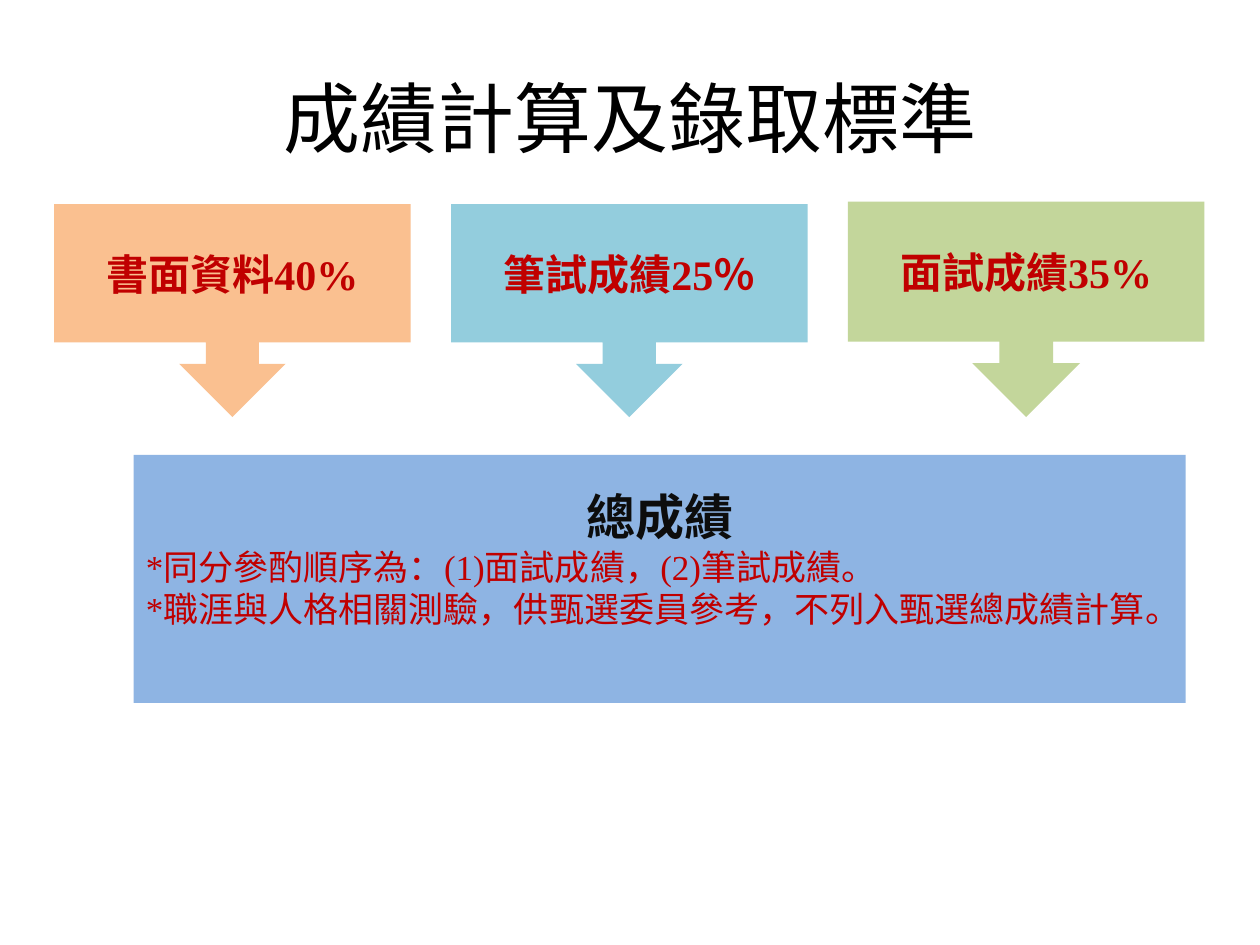
"""Build the slide on score calculation and admission criteria."""
from dataclasses import dataclass

from lxml.etree import SubElement
from pptx import Presentation
from pptx.dml.color import RGBColor
from pptx.enum.shapes import MSO_SHAPE
from pptx.enum.text import MSO_ANCHOR, PP_ALIGN
from pptx.oxml.ns import qn
from pptx.util import Inches, Pt

CJK = "Noto Sans CJK SC"
SERIF = "Times New Roman"
RED = "C00000"


@dataclass
class Score:
    text: str
    fill: str
    top: float = 1.62


@dataclass
class Line:
    text: str
    size: float
    color: str
    font: str = SERIF
    bold: bool = False
    align: PP_ALIGN = PP_ALIGN.CENTER
    spacing: float | None = None


SCORES = [
    Score("書面資料40%", "FAC090"),
    Score("筆試成績25％", "93CDDD"),
    Score("面試成績35%", "C3D69B", 1.6),
]
NOTES = [
    "*同分參酌順序為：(1)面試成績，(2)筆試成績。",
    "*職涯與人格相關測驗，供甄選委員參考，不列入甄選總成績計算。",
]


def rgb(value: str) -> RGBColor:
    """Turn a hex string into a colour."""
    return RGBColor.from_string(value)


def write(s, lines: list[Line], anchor=MSO_ANCHOR.MIDDLE) -> None:
    """Fill a shape with formatted paragraphs."""
    tf = s.text_frame
    tf.word_wrap = True
    tf.vertical_anchor = anchor
    tf.text = "\n".join(line.text for line in lines)
    for p, line in zip(tf.paragraphs, lines):
        p.alignment = line.align
        if line.spacing:
            p.line_spacing = Pt(line.spacing)
        r = p.runs[0]
        r.font.size = Pt(line.size)
        r.font.bold = line.bold
        r.font.color.rgb = rgb(line.color)
        r.font.name = line.font
        SubElement(r.font._element, qn("a:ea")).set("typeface", CJK)


def add_box(slide, kind, left: float, top: float, width: float, height: float, fill: str):
    """Add a flat filled shape without an outline."""
    s = slide.shapes.add_shape(kind, Inches(left), Inches(top), Inches(width), Inches(height))
    s.shadow.inherit = False
    s.fill.solid()
    s.fill.fore_color.rgb = rgb(fill)
    s.line.fill.background()
    return s


def main() -> None:
    """Create and save the presentation."""
    prs = Presentation()
    prs.slide_width, prs.slide_height = Inches(10), Inches(7.5)
    slide = prs.slides.add_slide(prs.slide_layouts[6])

    title = slide.shapes.add_textbox(Inches(0.5), Inches(0.3), Inches(9), Inches(1.25))
    write(title, [Line("成績計算及錄取標準", 44, "000000", CJK)])

    for i, score in enumerate(SCORES):
        s = add_box(slide, MSO_SHAPE.DOWN_ARROW_CALLOUT, 0.43 + 3.15 * i, score.top,
                    2.83, 3.31 - score.top, score.fill)
        write(s, [Line(score.text, 24, RED, bold=True)])

    total = add_box(slide, MSO_SHAPE.RECTANGLE, 1.06, 3.61, 8.35, 1.97, "8EB4E3")
    total.text_frame.margin_top = Inches(0.25)
    heading = Line("總成績", 28, "0D0D0D", CJK, bold=True, spacing=34)
    notes = [Line(text, 20, RED, align=PP_ALIGN.LEFT, spacing=24) for text in NOTES]
    write(total, [heading, *notes], MSO_ANCHOR.TOP)

    prs.save("out.pptx")


if __name__ == "__main__":
    main()
